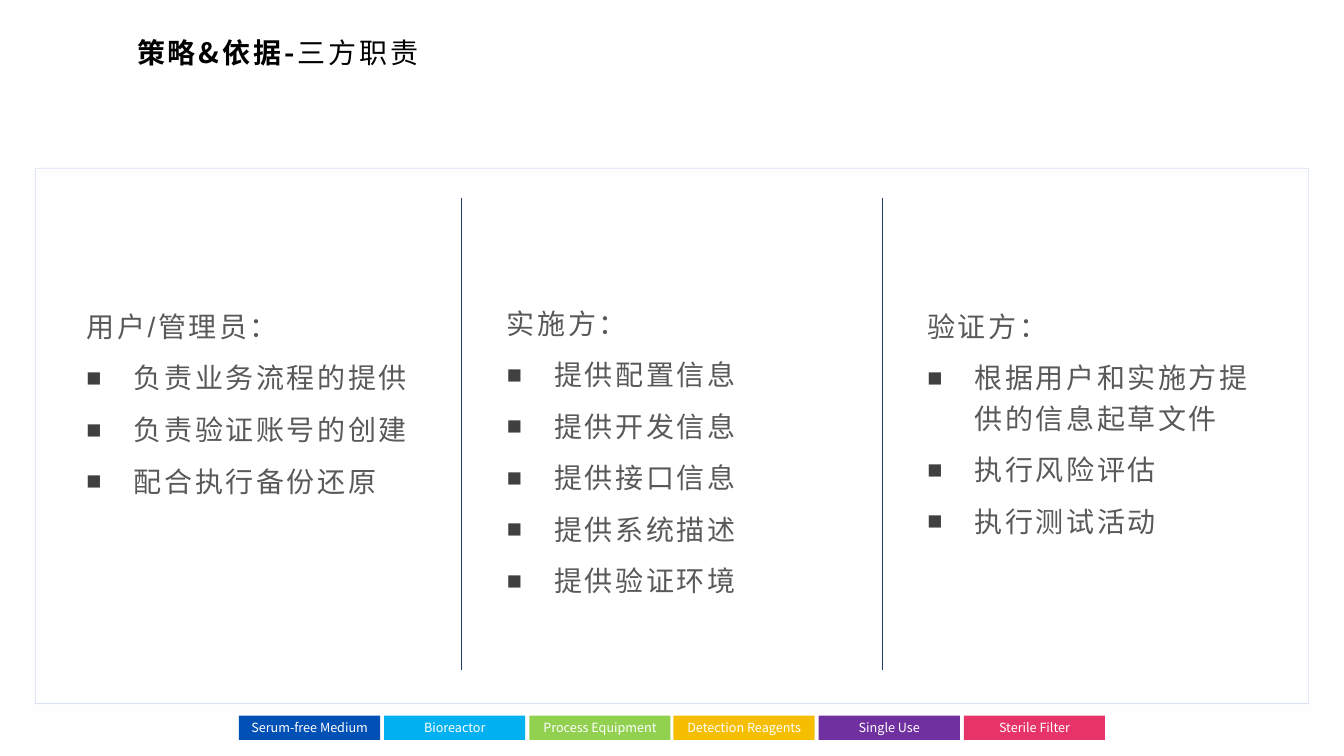
from lxml import etree
from pptx import Presentation
from pptx import util as u
from pptx.dml import color
from pptx.enum import shapes, text
from pptx.oxml import ns

PX = 9144
COLORS = {
    "blue": "0050B5", "cyan": "00B0F0", "green": "92D050",
    "yellow": "F6BE00", "purple": "7030A0", "pink": "E73468",
    "white": "FFFFFF", "black": "000000", "body": "595959",
    "bullet": "404040", "frame": "4472C4", "divider": "203864",
}
TABS = [
    ("Serum-free Medium", "blue"), ("Bioreactor", "cyan"),
    ("Process Equipment", "green"), ("Detection Reagents", "yellow"),
    ("Single Use", "purple"), ("Sterile Filter", "pink"),
]
ROLES = [
    (76, 233, 328, "用户/管理员：",
     ["负责业务流程的提供", "负责验证账号的创建", "配合执行备份还原"]),
    (493, 229, 432, "实施方：",
     ["提供配置信息", "提供开发信息", "提供接口信息", "提供系统描述", "提供验证环境"]),
    (910, 229, 376, "验证方：",
     ["根据用户和实施方提供的信息起草文件", "执行风险评估", "执行测试活动"]),
]


def px(*lengths):
    return [u.Emu(length * PX) for length in lengths]


def rgb(name):
    return color.RGBColor.from_string(COLORS[name])


def add_xml(parent, tag, **attributes):
    return etree.SubElement(parent, ns.qn(tag), attributes)


class SlideBuilder:
    heading_font = "Noto Sans CJK SC"
    body_font = "Arial"

    def __init__(self, page):
        self.page = page

    def rectangle(self, left, top, width, height):
        box = self.page.shapes.add_shape(
            shapes.MSO_SHAPE.RECTANGLE, *px(left, top, width, height))
        box.shadow.inherit = False
        return box

    def tab(self, left, label, fill):
        box = self.rectangle(left, 710, 140, 24)
        box.fill.solid()
        box.fill.fore_color.rgb = rgb(fill)
        box.line.fill.background()
        para = self.text_box(left - 4, 709, 148, 31).paragraphs[0]
        para.text = label
        para.alignment = text.PP_ALIGN.CENTER
        self.set_font(para, self.heading_font, 9, "white")

    def frame(self, left, top, width, height):
        box = self.rectangle(left, top, width, height)
        box.fill.background()
        box.line.color.rgb = rgb("frame")
        box.line.width = u.Pt(0.5)
        properties = box._element.spPr
        line_color = properties.find(".//" + ns.qn("a:ln")).find(".//" + ns.qn("a:srgbClr"))
        add_xml(line_color, "a:alpha", val="20000")
        effects = properties.find(ns.qn("a:effectLst"))
        shadow = add_xml(effects, "a:outerShdw", blurRad=str(u.Pt(4)),
                         dist=str(u.Pt(3)), dir="5400000", rotWithShape="0")
        shade = add_xml(shadow, "a:srgbClr", val=COLORS["black"])
        add_xml(shade, "a:alpha", val="40000")

    def divider(self, x, top, bottom):
        line = self.page.shapes.add_connector(
            shapes.MSO_CONNECTOR.STRAIGHT, *px(x, top, x, bottom))
        line.line.color.rgb = rgb("divider")
        line.line.width = u.Pt(0.5)
        add_xml(line._element.spPr, "a:effectLst")

    def text_box(self, left, top, width, height, anchor=text.MSO_ANCHOR.TOP):
        box = self.page.shapes.add_textbox(*px(left, top, width, height))
        frame = box.text_frame
        frame.word_wrap = True
        frame.vertical_anchor = anchor
        return frame

    def set_font(self, para, name, size, ink, spacing=0):
        font = para.font
        font.name = name
        font.size = u.Pt(size)
        font.color.rgb = rgb(ink)
        if spacing:
            font._element.set("spc", str(spacing))

    def bullet(self, para):
        properties = para._p.get_or_add_pPr()
        properties.set("marL", str(47 * PX))
        properties.set("indent", str(-47 * PX))
        ink = add_xml(properties, "a:buClr")
        add_xml(ink, "a:srgbClr", val=COLORS["bullet"])
        add_xml(properties, "a:buSzPct", val="90000")
        add_xml(properties, "a:buFont", typeface=self.body_font)
        add_xml(properties, "a:buChar", char="■")

    def role(self, left, top, height, heading, duties):
        frame = self.text_box(left, top, 346, height, text.MSO_ANCHOR.MIDDLE)
        for index, line in enumerate([heading, *duties]):
            para = frame.add_paragraph() if index else frame.paragraphs[0]
            para.text = line
            para.line_spacing = 1.2
            para.space_after = u.Pt(8)
            if index:
                self.bullet(para)
            self.set_font(para, self.body_font, 20, "body", 180)

    def title(self, topic, detail):
        frame = self.text_box(129, 18, 729, 67, text.MSO_ANCHOR.MIDDLE)
        frame.margin_left, frame.margin_right = px(7, 7)
        frame.margin_top, frame.margin_bottom = px(3, 3)
        para = frame.paragraphs[0]
        for words, bold in ((topic, True), (detail, False)):
            span = para.add_run()
            span.text = words
            span.font.bold = bold
        self.set_font(para, self.heading_font, 20, "black", 200)


def main():
    deck = Presentation()
    deck.slide_width, deck.slide_height = px(1333, 750)
    builder = SlideBuilder(deck.slides.add_slide(deck.slide_layouts[6]))
    for index, (label, fill) in enumerate(TABS):
        builder.tab(237 + round(index * 143.8), label, fill)
    builder.frame(35, 167, 1263, 531)
    for x in (458, 875):
        builder.divider(x, 196, 665)
    for role in ROLES:
        builder.role(*role)
    builder.title("策略&依据-", "三方职责")
    deck.save("out.pptx")


if __name__ == "__main__":
    main()
